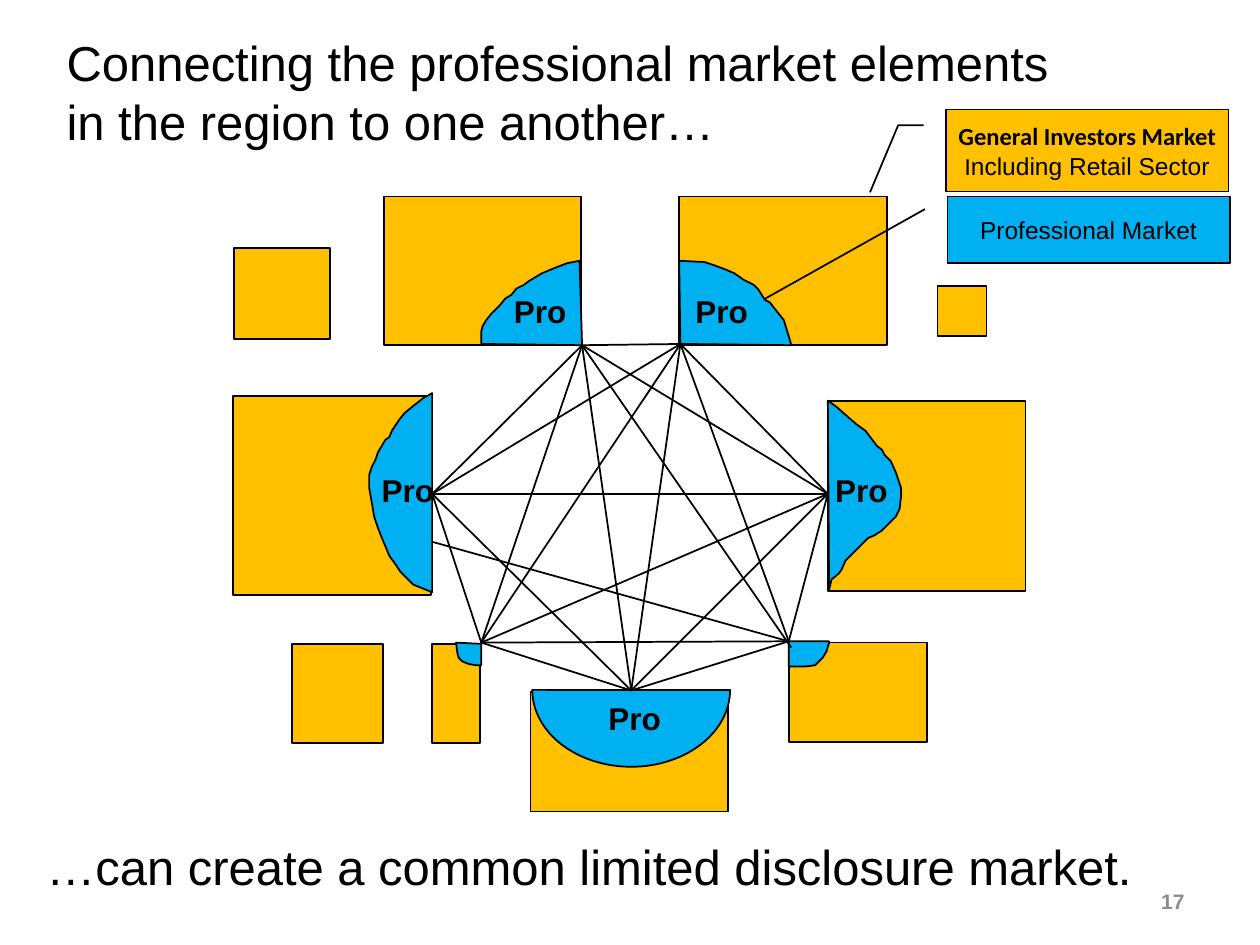
"""Build the slide on linking the professional markets of a region."""
import dataclasses
import itertools

import pptx
import pptx.dml.color
import pptx.enum.shapes
import pptx.enum.text
import pptx.oxml
import pptx.oxml.ns
import pptx.util

Inches = pptx.util.Inches
SHAPE = pptx.enum.shapes.MSO_SHAPE
ALIGN = pptx.enum.text.PP_ALIGN
ANCHOR = pptx.enum.text.MSO_ANCHOR


@dataclasses.dataclass(frozen=True)
class Theme:
    """Colours, fonts and type sizes of the slide."""
    general: str = "FFC000"
    professional: str = "00B0F0"
    ink: str = "000000"
    muted: str = "8C8C8C"
    font: str = "Arial"
    accent_font: str = "Calibri"
    heading: int = 28
    mark: int = 18
    legend: int = 14
    footer: int = 12
    stroke: int = 1


class SlideBuilder:
    """Draws styled elements on one slide."""

    def __init__(self, slide, theme):
        """Keep the slide and its theme."""
        self.shapes = slide.shapes
        self.theme = theme

    def color(self, value):
        """Turn a hex value into a colour."""
        return pptx.dml.color.RGBColor.from_string(value)

    def paint(self, shape, fill):
        """Give a shape its fill and outline."""
        shape.shadow.inherit = False
        shape.fill.solid()
        shape.fill.fore_color.rgb = self.color(fill)
        shape.line.color.rgb = self.color(self.theme.ink)
        shape.line.width = pptx.util.Pt(self.theme.stroke)
        return shape

    def style(self, span, size, color=None, bold=False, font=None):
        """Set the font of one run."""
        span.font.name = font or self.theme.font
        span.font.size = pptx.util.Pt(size)
        span.font.bold = bold
        span.font.color.rgb = self.color(color or self.theme.ink)

    def block(self, bounds, fill, kind=SHAPE.RECTANGLE, adjustments=()):
        """Add a preset shape."""
        shape = self.shapes.add_shape(kind, *map(Inches, bounds))
        for index, value in enumerate(adjustments):
            shape.adjustments[index] = value
        return self.paint(shape, fill)

    def outline(self, points, fill):
        """Add a closed freeform."""
        corners = [(Inches(x), Inches(y)) for x, y in points]
        builder = self.shapes.build_freeform(*corners[0])
        builder.add_line_segments(corners[1:], close=True)
        return self.paint(builder.convert_to_shape(), fill)

    def link(self, start, end):
        """Add a straight line between two points."""
        line = self.shapes.add_connector(
            pptx.enum.shapes.MSO_CONNECTOR.STRAIGHT, *map(Inches, start + end))
        line.line.color.rgb = self.color(self.theme.ink)
        line.line.width = pptx.util.Pt(self.theme.stroke)
        effects = pptx.oxml.ns.qn("a:effectLst")
        line._element.spPr.append(line._element.makeelement(effects, {}))

    def text(self, bounds, words, size, wrap=True, align=ALIGN.LEFT,
             anchor=ANCHOR.TOP, **look):
        """Add a text box with one paragraph per line."""
        box = self.shapes.add_textbox(*map(Inches, bounds))
        frame = box.text_frame
        frame.text = words
        frame.word_wrap = wrap
        frame.vertical_anchor = anchor
        for para in frame.paragraphs:
            para.alignment = align
            for span in para.runs:
                self.style(span, size, **look)

    def callout(self, bounds, fill, kind, adjustments, lines):
        """Add a legend callout from lines of (words, look) runs."""
        shape = self.block(bounds, fill, kind, adjustments)
        frame = shape.text_frame
        frame.word_wrap = False
        frame.vertical_anchor = ANCHOR.MIDDLE
        for index, runs in enumerate(lines):
            para = frame.add_paragraph() if index else frame.paragraphs[0]
            para.alignment = ALIGN.CENTER
            for words, look in runs:
                span = para.add_run()
                span.text = words
                self.style(span, self.theme.legend, **look)


MARKETS = [
    (3.05, 1.56, 1.56, 1.18), (5.39, 1.56, 1.65, 1.18),
    (6.57, 3.18, 1.57, 1.51), (1.85, 3.14, 1.57, 1.58),
    (4.21, 5.49, 1.57, 0.95), (7.44, 2.27, 0.39, 0.4),
    (2.32, 5.11, 0.72, 0.79), (1.86, 1.97, 0.76, 0.72),
    (6.26, 5.1, 1.1, 0.79), (3.43, 5.11, 0.38, 0.79),
]
PROFESSIONAL_AREAS = [
    [(4.6, 2.07), (4.5, 2.09), (4.42, 2.12), (4.3, 2.17), (4.2, 2.23),
     (4.16, 2.26), (4.1, 2.29), (4.06, 2.34), (4.01, 2.37), (3.97, 2.42),
     (3.9, 2.49), (3.86, 2.54), (3.83, 2.59), (3.82, 2.63), (3.82, 2.73),
     (4.62, 2.74)],
    [(5.39, 2.07), (5.59, 2.08), (5.68, 2.11), (5.76, 2.14), (5.83, 2.17),
     (5.9, 2.22), (5.98, 2.26), (6.02, 2.3), (6.07, 2.38), (6.11, 2.4),
     (6.14, 2.44), (6.18, 2.49), (6.22, 2.54), (6.26, 2.67), (6.28, 2.74),
     (5.4, 2.73)],
    [(3.43, 3.12), (3.36, 3.16), (3.27, 3.23), (3.21, 3.28), (3.17, 3.33),
     (3.11, 3.42), (3.09, 3.47), (3.06, 3.49), (3.03, 3.54), (3, 3.59),
     (2.98, 3.65), (2.95, 3.71), (2.93, 3.77), (2.93, 3.87), (2.95, 3.98),
     (2.97, 4.1), (3, 4.19), (3.04, 4.29), (3.09, 4.41), (3.14, 4.48),
     (3.18, 4.54), (3.24, 4.6), (3.28, 4.64), (3.33, 4.66), (3.43, 4.7)],
    [(6.57, 3.18), (6.64, 3.23), (6.73, 3.31), (6.8, 3.37), (6.87, 3.42),
     (6.96, 3.54), (7, 3.57), (7.02, 3.61), (7.07, 3.66), (7.11, 3.75),
     (7.13, 3.81), (7.15, 3.87), (7.15, 3.95), (7.14, 4.04), (7.11, 4.1),
     (7.09, 4.12), (7.05, 4.16), (7, 4.21), (6.94, 4.25), (6.89, 4.27),
     (6.83, 4.33), (6.76, 4.4), (6.71, 4.45), (6.68, 4.52), (6.66, 4.55),
     (6.6, 4.6), (6.58, 4.68)],
    [(6.26, 5.29), (6.39, 5.29), (6.47, 5.28), (6.5, 5.25), (6.53, 5.22),
     (6.56, 5.17), (6.58, 5.1), (6.58, 5.09), (6.26, 5.09)],
    [(3.62, 5.1), (3.63, 5.18), (3.64, 5.22), (3.67, 5.25), (3.72, 5.27),
     (3.78, 5.28), (3.82, 5.28), (3.82, 5.11)],
]
HUBS = {
    "north west": (4.62, 2.74), "north east": (5.4, 2.73),
    "west": (3.43, 3.92), "east": (6.57, 3.92),
    "south west": (3.82, 5.1), "south east": (6.26, 5.09),
    "south": (5.01, 5.48),
}
SHIFTED_LINKS = {
    ("west", "south east"): ((3.43, 4.3), (6.26, 5.09)),
    ("north west", "south east"): ((4.62, 2.74), (6.28, 5.14)),
}
MARKS = [(3.98, 2.27), (5.42, 2.27), (2.93, 3.69), (6.53, 3.69), (4.73, 5.5)]


def main():
    """Build and save the deck."""
    theme = Theme()
    deck = pptx.Presentation()
    deck.slide_width, deck.slide_height = Inches(10), Inches(7.5)
    page = SlideBuilder(deck.slides.add_slide(deck.slide_layouts[6]), theme)

    page.text((7.17, 6.95, 2.33, 0.4), "17", theme.footer, align=ALIGN.RIGHT,
              anchor=ANCHOR.MIDDLE, color=theme.muted, bold=True)
    for bounds in MARKETS:
        page.block(bounds, theme.general)
    for points in PROFESSIONAL_AREAS:
        page.outline(points, theme.professional)
    chord = page.block((4.4, 4.69, 1.22, 1.57), theme.professional,
                       SHAPE.CHORD, (54.03, 162))
    chord.rotation = 270
    for pair in itertools.combinations(HUBS, 2):
        page.link(*SHIFTED_LINKS.get(pair, [HUBS[name] for name in pair]))
    for corner in MARKS:
        page.text(corner + (0.63, 0.4), "Pro", theme.mark, wrap=False, bold=True)

    page.text((0.43, 0.21, 9.14, 1.04), "Connecting the professional market "
              "elements\nin the region to one another…", theme.heading)
    page.text((0.27, 6.59, 9.45, 0.57),
              "…can create a common limited disclosure market.", theme.heading)
    accent = {"font": theme.accent_font}
    page.callout((7.51, 0.87, 2.24, 0.65), theme.general, SHAPE.LINE_CALLOUT_2,
                 (0.19, -0.08, 0.19, -0.17, 1.01, -0.27),
                 [[("General Investors Market", {"bold": True, **accent})],
                  [("I", accent), ("ncluding Retail Sector", {})]])
    page.callout((7.52, 1.56, 2.24, 0.53), theme.professional,
                 SHAPE.LINE_CALLOUT_1, (0.19, -0.08, 1.54, -0.65),
                 [[("Professional Market", {})]])
    deck.save("out.pptx")


if __name__ == "__main__":
    main()
